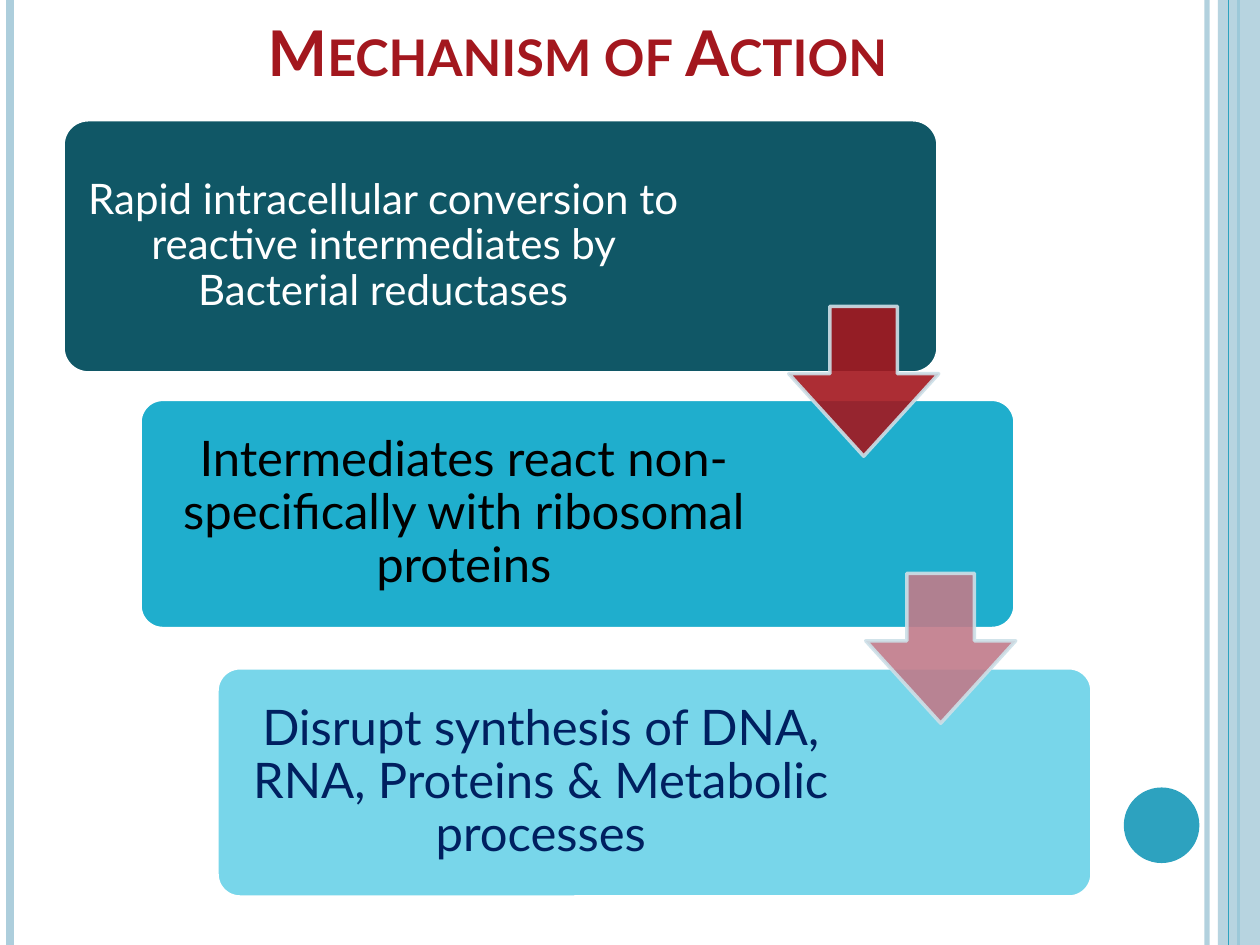
"""Build the Mechanism of Action slide: three stepped stages joined by arrows."""
import pptx
import pptx.dml.color
import pptx.enum.shapes
import pptx.enum.text
import pptx.oxml.ns
import pptx.util
from lxml import etree

Pt = pptx.util.Pt
SHAPE = pptx.enum.shapes.MSO_SHAPE
ANCHOR = pptx.enum.text.MSO_ANCHOR
qn = pptx.oxml.ns.qn

SLIDE_WIDTH, SLIDE_HEIGHT = 720, 540
FONT = "Lato"
RED, TEAL, PALE, RIM = "A3171E", "2DA2BF", "ADCEDC", "CDE0E8"
STAGE_LEFT, STAGE_STEP, STAGE_WIDTH = 36, 44, 500
ARROW_LEFT, ARROW_SIZE = 450.7, 85.7

# top, height, fill, text width, inset, size, colour, wording
STAGES = [
    (68.4, 144.7, "105766", 365.8, 7.2, 24, "FFFFFF",
     "Rapid intracellular conversion to reactive intermediates by Bacterial reductases"),
    (228.2, 131, "1FAECD", 370, 8.6, 28, "000000",
     "Intermediates react non-specifically with ribosomal proteins"),
    (381.6, 131, "78D6EA", 370, 8.6, 28, "002060",
     "Disrupt synthesis of DNA, RNA, Proteins & Metabolic processes"),
]
ARROWS = [(175, RED), (327.6, "C07B8A")]
# x, colour, width, opacity
RULES = [(689.8, PALE, 3, 93), (5.8, PALE, 4.5, 100), (707.8, TEAL, 1.5, 100)]
INNER_RULE = (702, TEAL, 0.75, 100)


def paint(color_format, hex_color, opacity=100):
    """Set a colour from a hex string, with opacity in percent."""
    color_format.rgb = pptx.dml.color.RGBColor.from_string(hex_color)
    if opacity < 100:
        color = color_format._xFill.find(qn("a:srgbClr"))
        etree.SubElement(color, qn("a:alpha")).set("val", str(opacity * 1000))


def add_rule(slide, x, color, width, opacity):
    """Draw a full-height vertical rule."""
    rule = slide.shapes.add_connector(
        pptx.enum.shapes.MSO_CONNECTOR.STRAIGHT, Pt(x), 0, Pt(x), Pt(SLIDE_HEIGHT))
    rule.line.width = Pt(width)
    rule.line.fill.solid()
    paint_fill(rule.line.fill, color, opacity)
    etree.SubElement(rule._element.spPr, qn("a:effectLst"))


def paint_fill(fill, color, opacity=100):
    """Make a fill solid in one colour."""
    fill.solid()
    paint(fill.fore_color, color, opacity)


def add_block(slide, preset, box, color, opacity=100, rim=None, adjustments=()):
    """Add a filled preset shape, with a 2 pt rim if one is given."""
    block = slide.shapes.add_shape(preset, *map(Pt, box))
    block.shadow.inherit = False
    paint_fill(block.fill, color, opacity)
    if rim:
        block.line.width = Pt(2)
        paint_fill(block.line.fill, rim, opacity)
    else:
        block.line.fill.background()
    for index, value in enumerate(adjustments):
        block.adjustments[index] = value


def write(frame, text, size, color, bold=False, small_caps=False,
          anchor=ANCHOR.MIDDLE, insets=(7.2, 3.6, 7.2, 3.6), spacing=1.0):
    """Write centred text into a frame with the given format."""
    frame.word_wrap = True
    frame.auto_size = pptx.enum.text.MSO_AUTO_SIZE.NONE
    frame.vertical_anchor = anchor
    (frame.margin_left, frame.margin_top,
     frame.margin_right, frame.margin_bottom) = map(Pt, insets)
    paragraph = frame.paragraphs[0]
    paragraph.alignment = pptx.enum.text.PP_ALIGN.CENTER
    paragraph.line_spacing = spacing
    run = paragraph.add_run()
    run.text = text
    run.font.name, run.font.size, run.font.bold = FONT, Pt(size), bold
    paint_fill(run.font.fill, color)
    if small_caps:
        run.font._element.set("cap", "small")


def add_title(slide, text):
    """Place and format the title placeholder."""
    title = slide.shapes.title
    title.left, title.top, title.width, title.height = map(Pt, (36, 0, 588, 90))
    write(title.text_frame, text, 36, RED, bold=True, small_caps=True,
          anchor=ANCHOR.BOTTOM, insets=(7.2, 3.6, 7.2, 39))


def add_stage(slide, index, top, height, fill, text_width, inset, size, color, text):
    """Add one stage box, stepped to the right, and its wording."""
    left = STAGE_LEFT + index * STAGE_STEP
    add_block(slide, SHAPE.ROUNDED_RECTANGLE, (left, top, STAGE_WIDTH, height),
              fill, rim="FFFFFF", adjustments=[0.1])
    wording = slide.shapes.add_textbox(*map(Pt, (left, top, text_width, height)))
    write(wording.text_frame, text, size, color, insets=[inset] * 4, spacing=0.9)


def main():
    """Build and save the slide."""
    deck = pptx.Presentation()
    deck.slide_width, deck.slide_height = Pt(SLIDE_WIDTH), Pt(SLIDE_HEIGHT)
    slide = deck.slides.add_slide(deck.slide_layouts[5])
    for rule in RULES:
        add_rule(slide, *rule)
    add_block(slide, SHAPE.RECTANGLE, (696, 0, 24, SLIDE_HEIGHT), PALE, opacity=87)
    add_rule(slide, *INNER_RULE)
    add_block(slide, SHAPE.OVAL, (642.2, 450, 43.2, 43.2), TEAL)
    add_title(slide, "Mechanism of Action")
    for index, stage in enumerate(STAGES):
        add_stage(slide, index, *stage)
    for index, (top, color) in enumerate(ARROWS):
        left = ARROW_LEFT + index * STAGE_STEP
        add_block(slide, SHAPE.DOWN_ARROW, (left, top, ARROW_SIZE, ARROW_SIZE),
                  color, opacity=90, rim=RIM, adjustments=[0.45, 0.55])
    deck.save("out.pptx")


if __name__ == "__main__":
    main()
